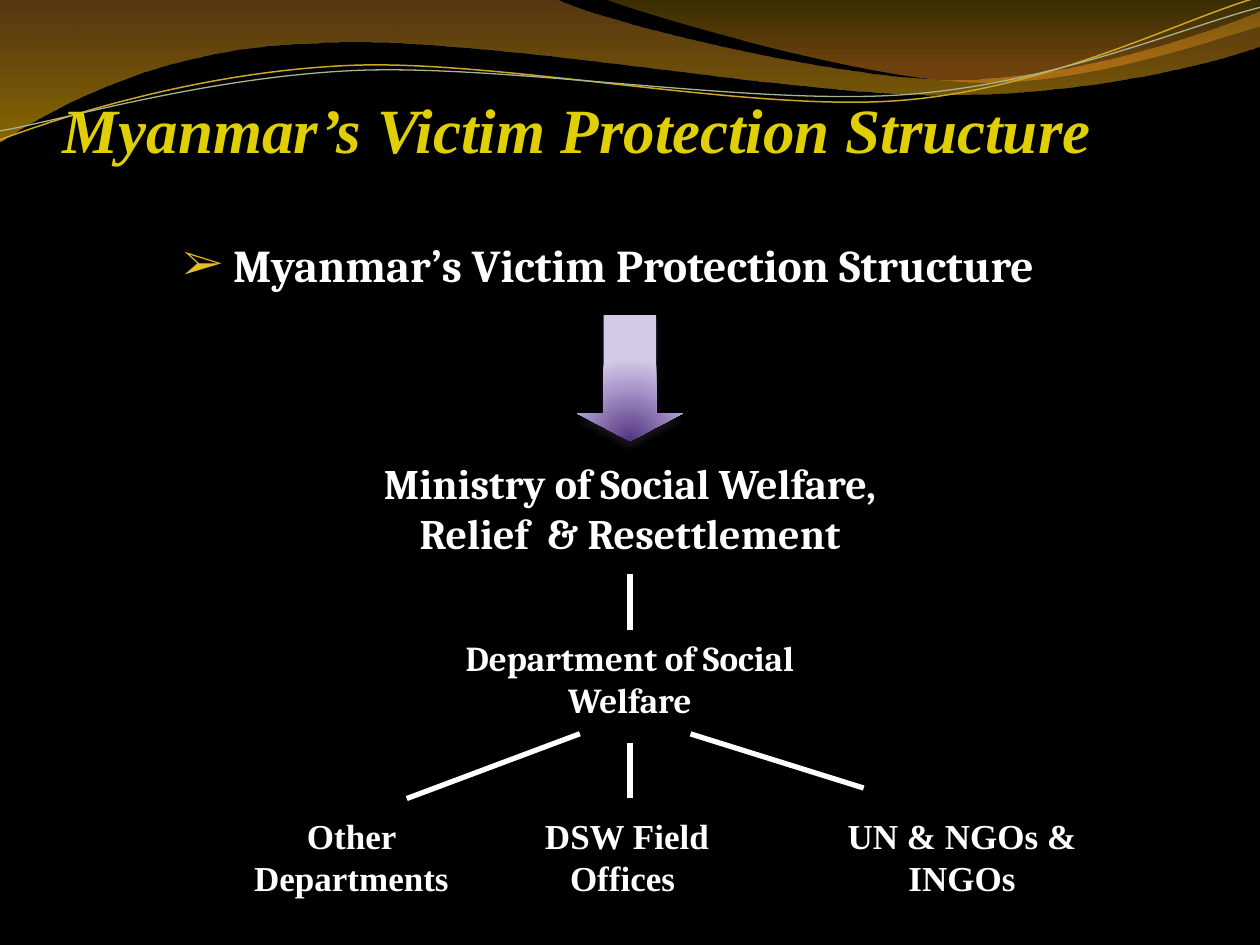
from lxml import etree
from pptx import Presentation
from pptx import util as u
from pptx.dml.color import RGBColor
from pptx.enum import shapes, text
from pptx.oxml import ns, parse_xml

BLACK = RGBColor(0x00, 0x00, 0x00)
WHITE = RGBColor(0xFF, 0xFF, 0xFF)
YELLOW = RGBColor(0xDF, 0xCF, 0x04)
GOLD = RGBColor(0xE7, 0xBC, 0x29)
OCHRE = RGBColor(0xCC, 0xA6, 0x24)
SAGE = RGBColor(0xA5, 0xB5, 0x92)
BROWN = RGBColor(0xC0, 0x7A, 0x28)
AMBER = RGBColor(0xF7, 0xBF, 0x00)
OLIVE = RGBColor(0xC0, 0x97, 0x09)
ORANGE = RGBColor(0xF5, 0x93, 0x20)
PURPLE = RGBColor(0x52, 0x34, 0x81)
LILAC = RGBColor(0xAE, 0x9B, 0xCE)
PALE_LILAC = RGBColor(0xD4, 0xC9, 0xE7)
SHADOW = RGBColor(0x37, 0x2E, 0x44)

SERIF, HEADING = "Cambria", "Times New Roman"
DOWNWARD = '<a:lin ang="5400000" scaled="0"/>'
FROM_TIP = ('<a:path path="circle"><a:fillToRect l="50000" t="130000" '
            'r="50000" b="-30000"/></a:path>')

# Wave outlines in cm: a start, then lines (one point) or curves (three points)
BROAD_WAVE = [
    (0, 0), [(11.18, -0.03)],
    [(12.09, 0.43), (16.87, 1.6), (19.25, 1.6)],
    [(21.67, 1.6), (24.33, 0.66), (25.4, 0.23)], [(25.43, 0.91)],
    [(24.97, 1.12), (22.1, 1.93), (18.95, 1.91)],
    [(15.8, 1.91), (9.7, 0.71), (6.53, 0.86)],
    [(3.28, 0.91), (1.17, 2.11), (-0.03, 2.87)], [(0, 0)]]
CORNER_WAVE = [
    (12.17, -0.03),
    [(12.93, 0.28), (17.32, 1.57), (19.53, 1.65)],
    [(21.74, 1.75), (24.41, 0.81), (25.4, 0.53)], [(25.4, 0)], [(12.17, -0.03)]]
OCHRE_STRAND = [
    (0, 2.82),
    [(1.22, 2.36), (4.01, 1.45), (7.04, 1.32)],
    [(10.03, 1.19), (15.06, 2.26), (18.11, 2.03)],
    [(21.16, 1.8), (23.83, 0.38), (25.35, -0.05)]]
SAGE_STRAND = [
    (0, 2.64),
    [(1.19, 2.44), (4.17, 1.55), (7.19, 1.42)],
    [(10.24, 1.3), (15.16, 2.13), (18.21, 1.91)],
    [(21.23, 1.7), (23.9, 0.53), (25.4, 0.15)]]


def apply(target, formats):
    for name, value in formats.items():
        setattr(target, name, value)


def fill_gradient(shape, stops, direction):
    """Stops are (position %, colour, opacity %)."""
    marks = "".join(
        f'<a:gs pos="{pos * 1000}"><a:srgbClr val="{colour}">'
        f'<a:alpha val="{opacity * 1000}"/></a:srgbClr></a:gs>'
        for pos, colour, opacity in stops)
    gradient = parse_xml(f'<a:gradFill {ns.nsdecls("a")} rotWithShape="1">'
                         f'<a:gsLst>{marks}</a:gsLst>{direction}</a:gradFill>')
    shape.fill.background()
    no_fill = shape._element.spPr.find(ns.qn("a:noFill"))
    no_fill.getparent().replace(no_fill, gradient)


def add_outline(slide, left, top, outline, close):
    """Draw straight segments between the knots, then bend those that are curves."""
    def place(point):
        return u.Cm(left + point[0]), u.Cm(top + point[1])

    start, *segments = outline
    builder = slide.shapes.build_freeform(*place(start))
    builder.add_line_segments([place(segment[-1]) for segment in segments], close=close)
    wave = builder.convert_to_shape()
    wave.shadow.inherit = False

    sides = list(wave._element.iter(ns.qn("a:lnTo")))
    for side, segment in zip(sides, segments):
        if len(segment) == 3:
            curve = etree.Element(ns.qn("a:cubicBezTo"))
            for x, y in map(place, segment):
                etree.SubElement(curve, ns.qn("a:pt"),
                                 x=str(x - wave.left), y=str(y - wave.top))
            side.getparent().replace(side, curve)
    return wave


def add_waves(slide, left, top):
    for outline, stops in (
            (BROAD_WAVE, [(0, BROWN, 45), (100, AMBER, 55)]),
            (CORNER_WAVE, [(0, OLIVE, 30), (80, ORANGE, 45)])):
        wave = add_outline(slide, left, top, outline, True)
        fill_gradient(wave, stops, DOWNWARD)
        wave.line.fill.background()
    for outline, colour, width in ((OCHRE_STRAND, OCHRE, 0.85), (SAGE_STRAND, SAGE, 0.75)):
        strand = add_outline(slide, left, top, outline, False)
        strand.fill.background()
        strand.line.color.rgb = colour
        strand.line.width = u.Pt(width)


def add_label(slide, box, words, size, font=SERIF, colour=WHITE, italic=False,
              align=text.PP_ALIGN.CENTER, **frame_formats):
    frame = slide.shapes.add_textbox(*map(u.Cm, box)).text_frame
    apply(frame, {"word_wrap": True, **frame_formats})
    paragraph = frame.paragraphs[0]
    paragraph.alignment = align
    run = paragraph.add_run()
    run.text = words
    apply(run.font, {"name": font, "size": u.Pt(size), "bold": True, "italic": italic})
    run.font.color.rgb = colour
    return paragraph


def add_title(slide, box):
    add_label(slide, box, "Myanmar’s Victim Protection Structure", 36, HEADING, YELLOW,
              True, text.PP_ALIGN.LEFT, margin_left=0, margin_right=0,
              margin_bottom=u.Cm(1.53), vertical_anchor=text.MSO_ANCHOR.BOTTOM)


def add_heading(slide, box):
    heading = add_label(slide, box, " Myanmar’s Victim Protection Structure", 26)
    properties = heading._p.get_or_add_pPr()
    properties.set("marL", str(u.Cm(0.76)))
    properties.set("indent", str(-u.Cm(0.76)))
    colour = etree.SubElement(properties, ns.qn("a:buClr"))
    etree.SubElement(colour, ns.qn("a:srgbClr"), val=str(GOLD))
    etree.SubElement(properties, ns.qn("a:buSzPct"), val="95000")
    etree.SubElement(properties, ns.qn("a:buFont"), typeface=HEADING)
    etree.SubElement(properties, ns.qn("a:buChar"), char="➢")


def add_down_arrow(slide, box):
    arrow = slide.shapes.add_shape(shapes.MSO_SHAPE.DOWN_ARROW, *map(u.Cm, box))
    arrow.adjustments[0], arrow.adjustments[1] = 0.5, 0.26
    fill_gradient(arrow, [(0, PURPLE, 100), (68, LILAC, 100), (100, PALE_LILAC, 100)],
                  FROM_TIP)
    arrow.line.fill.background()
    arrow._element.spPr.append(parse_xml(
        f'<a:effectLst {ns.nsdecls("a")}><a:outerShdw blurRad="{u.Pt(4.5)}" '
        f'dist="{u.Pt(3)}" dir="5400000" rotWithShape="0"><a:srgbClr val="{SHADOW}">'
        '<a:alpha val="48000"/></a:srgbClr></a:outerShdw></a:effectLst>'))


def add_branch(slide, *ends):
    branch = slide.shapes.add_connector(shapes.MSO_CONNECTOR.STRAIGHT, *map(u.Cm, ends))
    branch.line.color.rgb = WHITE
    branch.line.width = u.Pt(3)
    branch._element.spPr.find(ns.qn("a:ln")).set("cap", "sq")
    etree.SubElement(branch._element.spPr, ns.qn("a:effectLst"))


def add_hierarchy(slide, left, top, width):
    middle = left + width / 2
    fit = {"auto_size": text.MSO_AUTO_SIZE.SHAPE_TO_FIT_TEXT}

    # Ministry and department, centred one above the other
    for words, size, offset, span, height in (
            ("Ministry of Social Welfare, Relief  & Resettlement", 24, 0, 12.7, 2.31),
            ("Department of Social Welfare", 20, 3.6, 8.36, 1.96)):
        add_label(slide, (middle - span / 2, top + offset, span, height), words, size, **fit)

    # Partner bodies in the bottom row
    for words, offset, span in (("Other Departments", 0, 5.69),
                                ("DSW Field Offices ", 5.72, 5.36),
                                ("UN & NGOs & INGOs", 12.27, 5.77)):
        add_label(slide, (left + offset, top + 7.2, span, 1.96), words, 20, HEADING, **fit)

    # Branches, as offsets from the middle and the top
    for x1, y1, x2, y2 in ((0, 2.53, 0, 3.54), (1.27, 5.71, 4.66, 6.77),
                           (-4.45, 6.98, -1.06, 5.71), (0, 5.93, 0, 6.93)):
        add_branch(slide, middle + x1, top + y1, middle + x2, top + y2)


def main():
    deck = Presentation()
    deck.slide_width, deck.slide_height = u.Cm(25.4), u.Cm(19.05)
    slide = deck.slides.add_slide(deck.slide_layouts[6])
    slide.background.fill.solid()
    slide.background.fill.fore_color.rgb = BLACK

    add_waves(slide, 0, 0)
    add_title(slide, (1.27, 1.9, 22.86, 2.97))
    add_heading(slide, (0.85, 4.65, 22.86, 12.57))
    add_down_arrow(slide, (11.64, 6.35, 2.12, 2.54))
    add_hierarchy(slide, 4.24, 9.1, 16.92)
    deck.save("out.pptx")


if __name__ == "__main__":
    main()
